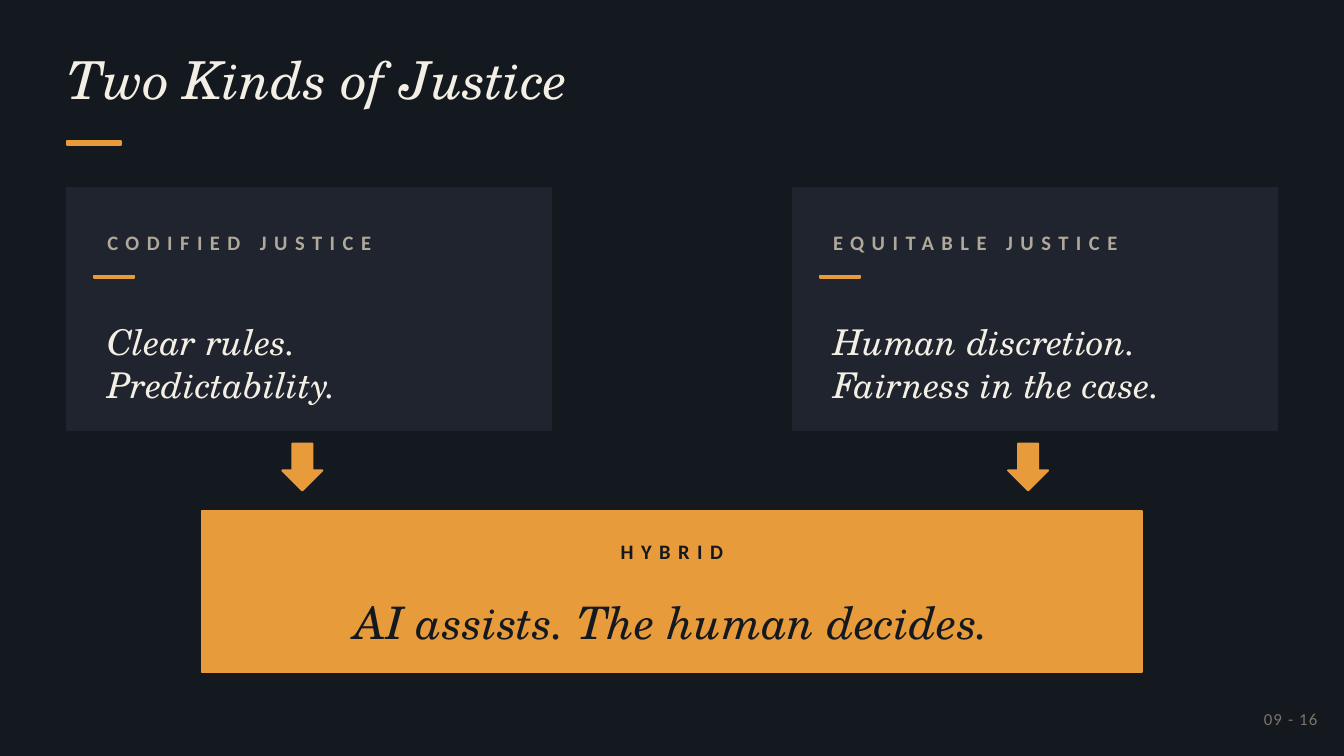
from pptx import Presentation
from pptx.dml.color import RGBColor
from pptx.enum.shapes import MSO_SHAPE
from pptx.enum.text import MSO_ANCHOR, MSO_AUTO_SIZE, PP_ALIGN
from pptx.util import Pt

INK = RGBColor(0x14, 0x18, 0x1F)
PANEL = RGBColor(0x1F, 0x24, 0x2E)
AMBER = RGBColor(0xE8, 0x9B, 0x3A)
CREAM = RGBColor(0xF4, 0xEF, 0xE5)
SAND = RGBColor(0xB0, 0xA8, 0x9A)
GREY = RGBColor(0x7A, 0x74, 0x6A)
SERIF, SANS = "TeX Gyre Schola", "Calibri"


class Deck:
    def __init__(self, width, height):
        self.file = Presentation()
        self.file.slide_width, self.file.slide_height = Pt(width), Pt(height)
        self.slide = self.file.slides.add_slide(self.file.slide_layouts[5])
        self.slide.background.fill.solid()
        self.slide.background.fill.fore_color.rgb = INK

    def place(self, shape, x, y, w, h):
        shape.left, shape.top, shape.width, shape.height = map(Pt, (x, y, w, h))

    def fill_text(self, frame, lines, size, color, face, align, track=0):
        """Serif text is italic here; widely tracked text is a bold label."""
        frame.word_wrap = True
        for i, line in enumerate(lines):
            para = frame.add_paragraph() if i else frame.paragraphs[0]
            para.alignment = align
            font = para.font
            font.name, font.size, font.color.rgb = face, Pt(size), color
            font.italic = face == SERIF
            font.bold = track > 1
            run = para.add_run()
            run.text = line
            if track:
                run._r.get_or_add_rPr().set("spc", str(int(track * 100)))

    def title(self, text, x, y, w, h):
        shape = self.slide.shapes.title
        self.place(shape, x, y, w, h)
        frame = shape.text_frame
        frame.auto_size = MSO_AUTO_SIZE.NONE
        frame.vertical_anchor = MSO_ANCHOR.TOP
        frame.margin_left = frame.margin_right = 0
        frame.margin_top = frame.margin_bottom = 0
        self.fill_text(frame, [text], 28, CREAM, SERIF, PP_ALIGN.LEFT)

    def text(self, lines, x, y, w, h, size, color, face=SERIF,
             align=PP_ALIGN.LEFT, track=0):
        box = self.slide.shapes.add_textbox(Pt(x), Pt(y), Pt(w), Pt(h))
        box.text_frame.vertical_anchor = MSO_ANCHOR.MIDDLE
        self.fill_text(box.text_frame, lines, size, color, face, align, track)

    def label(self, text, x, y, w, color, align=PP_ALIGN.LEFT):
        self.text([text], x, y, w, 28.8, 11, color, SANS, align, 4)

    def block(self, x, y, w, h, color=AMBER, kind=MSO_SHAPE.RECTANGLE):
        shape = self.slide.shapes.add_shape(kind, Pt(x), Pt(y), Pt(w), Pt(h))
        shape.shadow.inherit = False
        shape.fill.solid()
        shape.fill.fore_color.rgb = color
        shape.line.color.rgb = color
        shape.line.width = Pt(1)

    def card(self, x, head, lines):
        inner = x + 14.4
        self.block(x, 100.8, 259.2, 129.6, PANEL)
        self.label(head, inner, 115.2, 230.4, SAND)
        self.block(inner, 147.6, 21.6, 1.44)
        self.text(lines, inner, 162, 230.4, 64.8, 19, CREAM)


def main():
    deck = Deck(720, 405)

    # Title and accent rule
    deck.title("Two Kinds of Justice", 36, 25.2, 648, 57.6)
    deck.block(36, 75.6, 28.8, 2.16)

    # Two cards, each with an arrow down to the hybrid
    cards = [
        (36, "CODIFIED JUSTICE", ["Clear rules.", "Predictability."]),
        (424.8, "EQUITABLE JUSTICE",
         ["Human discretion.", "Fairness in the case."]),
    ]
    for x, head, lines in cards:
        deck.card(x, head, lines)
    for x, *_ in cards:
        deck.block(x + 115.2, 237.6, 21.6, 25.2, kind=MSO_SHAPE.DOWN_ARROW)

    # Hybrid panel
    deck.block(108, 273.6, 504, 86.4)
    deck.label("HYBRID", 108, 280.8, 504, INK, PP_ALIGN.CENTER)
    deck.text(["AI assists. The human decides."], 108, 309.6, 504, 46.8,
              24, INK, align=PP_ALIGN.CENTER)

    # Page number, lightly tracked
    deck.text(["09 - 16"], 626.4, 374.4, 86.4, 21.6, 9, GREY, SANS,
              PP_ALIGN.RIGHT, 0.6)

    deck.file.save("out.pptx")


if __name__ == "__main__":
    main()
